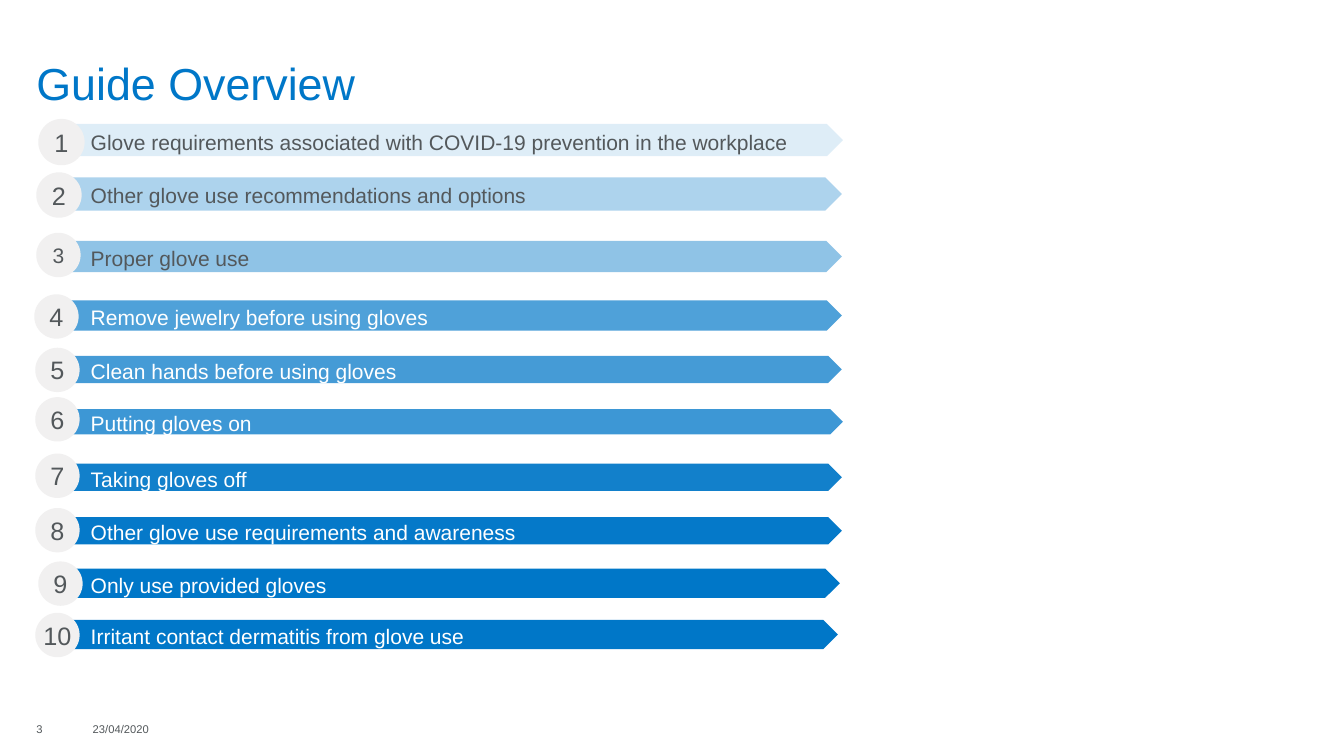
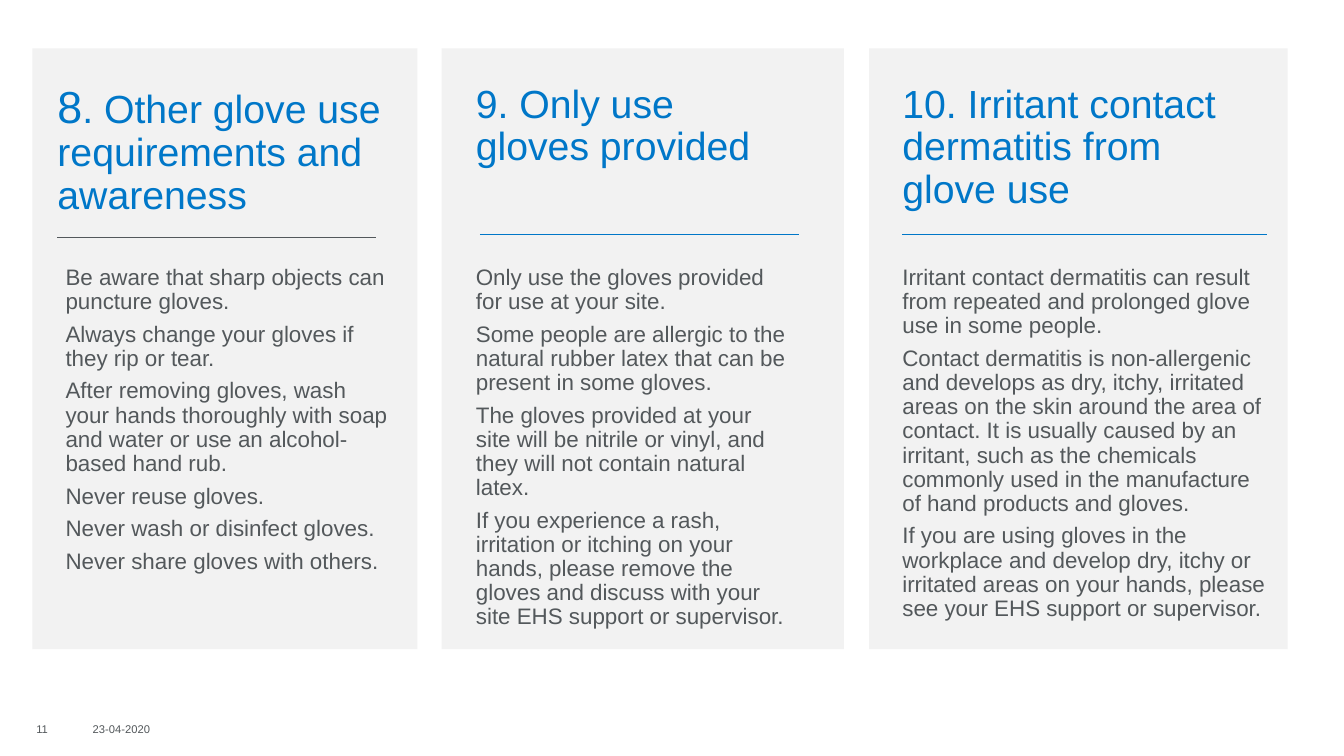
from dataclasses import dataclass

from lxml.etree import SubElement
from pptx import Presentation
from pptx.dml.color import RGBColor
from pptx.enum.shapes import MSO_CONNECTOR as Connector, MSO_SHAPE as Preset
from pptx.enum.text import MSO_ANCHOR as Anchor, MSO_AUTO_SIZE as AutoSize, PP_ALIGN as Align
from pptx.oxml.ns import qn
from pptx.util import Inches, Pt


@dataclass(frozen=True)
class Theme:
    font: str = "Arial"
    blue: RGBColor = RGBColor(0x00, 0x77, 0xC8)
    grey: RGBColor = RGBColor(0x53, 0x58, 0x5B)
    white: RGBColor = RGBColor(0xFF, 0xFF, 0xFF)
    badge: RGBColor = RGBColor(0xF1, 0xF0, 0xF0)
    panel: RGBColor = RGBColor(0xF2, 0xF2, 0xF2)
    title: int = 32
    heading: int = 28
    number: int = 18
    body: int = 16
    label: int = 15
    footer: int = 8


theme = Theme()


def write(shape, paragraphs, size, color, align=Align.LEFT, anchor=Anchor.TOP,
          line_spacing=1.0, margin_left=0, margin_top=0):
    """Fill a shape with paragraphs; a paragraph is a list of runs."""
    frame = shape.text_frame
    frame.word_wrap = True
    frame.auto_size = AutoSize.NONE
    frame.vertical_anchor = anchor
    frame.margin_left, frame.margin_top = Inches(margin_left), Inches(margin_top)
    frame.margin_right = frame.margin_bottom = 0
    for index, runs in enumerate(paragraphs):
        paragraph = frame.add_paragraph() if index else frame.paragraphs[0]
        for text in runs:
            paragraph.add_run().text = text
        paragraph.alignment = align
        paragraph.line_spacing = line_spacing
        paragraph.space_before = Pt(6 if index else 0)
        paragraph.font.name = theme.font
        paragraph.font.size = Pt(size)
        paragraph.font.color.rgb = color


def add_filled(slide, preset, box, color):
    shape = slide.shapes.add_shape(preset, *map(Inches, box))
    shape.shadow.inherit = False
    shape.fill.solid()
    shape.fill.fore_color.rgb = color
    shape.line.fill.background()
    return shape


presentation = Presentation()
presentation.slide_width = Inches(13.33)
presentation.slide_height = Inches(7.5)
title_only = presentation.slide_layouts[5]

# Slides with their titles and footers
slides = []
for title_box, title_runs, title_size, number, date in (
    ((0.36, 0.61, 12.61, 1.1), ["Guide Overview"], theme.title, "3", "23/04/2020"),
    ((0.57, 0.84, 3.82, 1.1), ["8", ". Other glove use requirements and awareness"],
     theme.heading, "11", "23-04-2020"),
):
    slide = presentation.slides.add_slide(title_only)
    title = slide.shapes.title
    title.left, title.top, title.width, title.height = map(Inches, title_box)
    write(title, [title_runs], title_size, theme.blue, line_spacing=0.9)
    for left, width, text in ((0.36, 0.42, number), (0.92, 1.13, date)):
        footer = slide.shapes.add_textbox(*map(Inches, (left, 7.11, width, 0.19)))
        write(footer, [[text]], theme.footer, theme.grey, anchor=Anchor.BOTTOM)
    slides.append(slide)
overview, details = slides

# Overview: numbered arrow bars of growing opacity
# label, opacity in percent, bar (left, top, width, height), badge (left, top, diameter)
topics = (
    ("Glove requirements associated with COVID-19 prevention in the workplace", 13,
     (0.64, 1.23, 7.72, 0.32), (0.38, 1.18, 0.46)),
    ("Other glove use recommendations and options", 32,
     (0.61, 1.76, 7.74, 0.33), (0.36, 1.71, 0.45)),
    ("Proper glove use", 44, (0.61, 2.39, 7.74, 0.31), (0.36, 2.31, 0.44)),
    ("Remove jewelry before using gloves", 69, (0.61, 2.98, 7.74, 0.3), (0.34, 2.92, 0.44)),
    ("Clean hands before using gloves", 73, (0.61, 3.53, 7.74, 0.27), (0.35, 3.45, 0.44)),
    ("Putting gloves on", 76, (0.64, 4.06, 7.72, 0.25), (0.35, 3.94, 0.44)),
    ("Taking gloves off", 93, (0.63, 4.6, 7.72, 0.27), (0.35, 4.5, 0.44)),
    ("Other glove use requirements and awareness", 98,
     (0.63, 5.13, 7.72, 0.27), (0.35, 5.04, 0.44)),
    ("Only use provided gloves", 100, (0.61, 5.64, 7.72, 0.29), (0.38, 5.57, 0.44)),
    ("Irritant contact dermatitis from glove use", 100,
     (0.59, 6.15, 7.72, 0.29), (0.35, 6.08, 0.44)),
)
label_left = 0.9
for number, (label, opacity, bar_box, (left, top, diameter)) in enumerate(topics, 1):
    bar = add_filled(overview, Preset.PENTAGON, bar_box, theme.blue)
    if opacity < 100:
        color = bar.element.spPr.find(qn("a:solidFill"))[0]
        SubElement(color, qn("a:alpha"), val=str(opacity * 1000))
    write(bar, [[label]], theme.label, theme.grey if opacity < 50 else theme.white,
          anchor=Anchor.MIDDLE, margin_left=label_left - bar_box[0], margin_top=0.03)
    badge = add_filled(overview, Preset.OVAL, (left, top, diameter, diameter), theme.badge)
    write(badge, [[str(number)]], theme.label if number == 3 else theme.number, theme.grey,
          align=Align.CENTER, anchor=Anchor.MIDDLE)
    badge.text_frame.word_wrap = False

# Details: three panels, each with heading, rule and body
# panel (left, width), heading (left, width), rule (left, right, top, color), body (left, width)
columns = (
    ((0.32, 3.82), None, (0.57, 3.73, 2.35, theme.grey), (0.65, 3.25), None, (
        "Be aware that sharp objects can puncture gloves.",
        "Always change your gloves if they rip or tear.",
        "After removing gloves, wash your hands thoroughly with soap and water or use an "
        "alcohol-based hand rub.",
        "Never reuse gloves.",
        "Never wash or disinfect gloves.",
        "Never share gloves with others.",
    )),
    ((4.38, 3.99), (4.72, 3.07), (4.76, 7.92, 2.33, theme.blue), (4.72, 3.09),
     "9. Only use gloves provided", (
        "Only use the gloves provided for use at your site.",
        "Some people are allergic to the natural rubber latex that can be present in some "
        "gloves.",
        "The gloves provided at your site will be nitrile or vinyl, and they will not "
        "contain natural latex.",
        "If you experience a rash, irritation or itching on your hands, please remove the "
        "gloves and discuss with your site EHS support or supervisor.",
    )),
    ((8.62, 4.15), (8.95, 3.47), (8.95, 12.57, 2.33, theme.blue), (8.95, 3.62),
     "10. Irritant contact dermatitis from glove use", (
        "Irritant contact dermatitis can result from repeated and prolonged glove use in "
        "some people.",
        "Contact dermatitis is non-allergenic and develops as dry, itchy, irritated areas "
        "on the skin around the area of contact. It is usually caused by an irritant, such "
        "as the chemicals commonly used in the manufacture of hand products and gloves.",
        "If you are using gloves in the workplace and develop dry, itchy or irritated areas "
        "on your hands, please see your EHS support or supervisor.",
    )),
)
for panel_span, heading_span, rule_place, body_span, heading_text, body_texts in columns:
    left, width = panel_span
    panel = add_filled(details, Preset.RECTANGLE, (left, 0.48, width, 5.96), theme.panel)
    if heading_text:
        left, width = heading_span
        heading = details.shapes.add_textbox(*map(Inches, (left, 0.84, width, 1.1)))
        write(heading, [[heading_text]], theme.heading, theme.blue, line_spacing=0.9)
    else:
        # The slide title heads this column, so it goes in front of the panel
        title = details.shapes.title
        title.text_frame.paragraphs[0].runs[0].font.size = Pt(theme.title)
        panel.element.addnext(title.element)
    left, right, top, color = rule_place
    rule = details.shapes.add_connector(
        Connector.STRAIGHT, *map(Inches, (left, top, right, top)))
    rule.line.color.rgb = color
    rule.line.width = Pt(0.5)
    SubElement(rule.element.spPr, qn("a:effectLst"))
    left, width = body_span
    body = details.shapes.add_textbox(*map(Inches, (left, 2.64, width, 3.77)))
    write(body, [[text] for text in body_texts], theme.body, theme.grey, line_spacing=0.9)

presentation.save("out.pptx")
